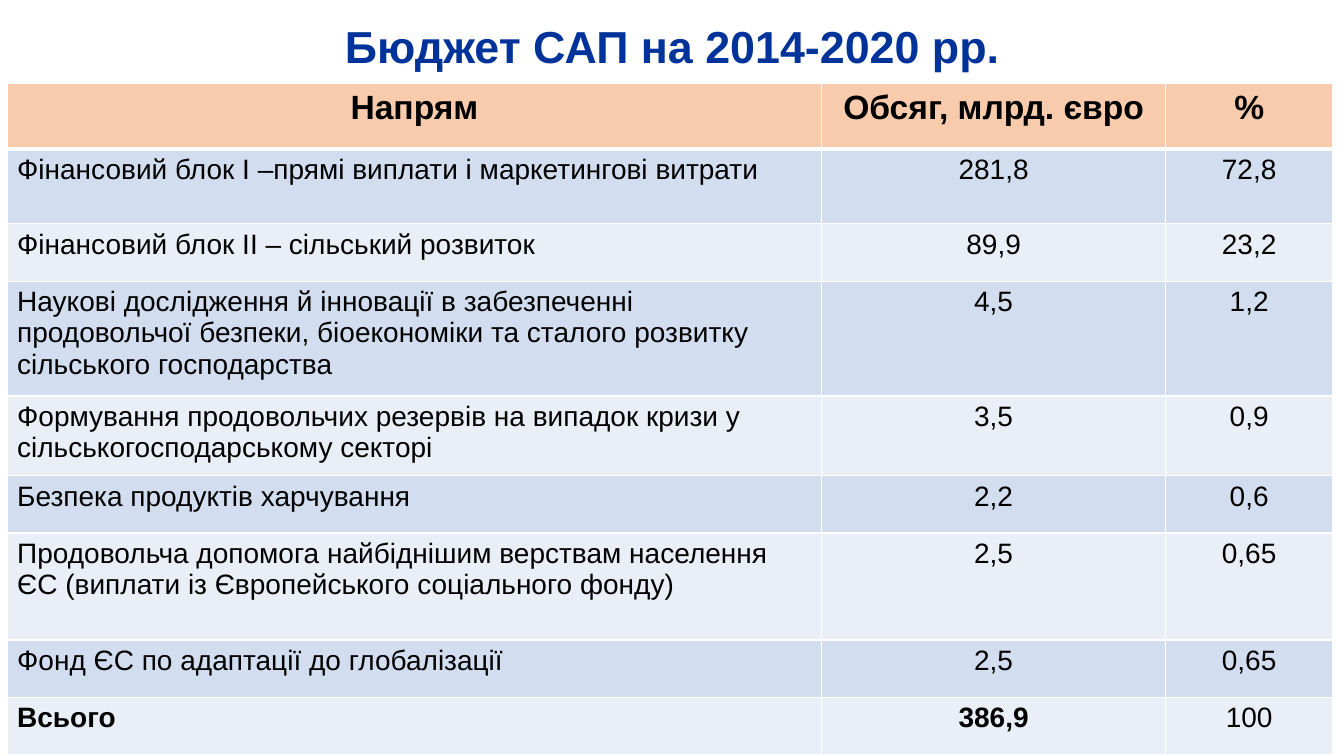
"""Build the slide with the 2014-2020 agricultural policy budget table."""
from dataclasses import dataclass

from lxml import etree
from pptx import Presentation
from pptx.dml.color import RGBColor
from pptx.enum.text import MSO_ANCHOR, PP_ALIGN
from pptx.oxml.ns import qn
from pptx.util import Inches, Pt

LEFT, CENTER = PP_ALIGN.LEFT, PP_ALIGN.CENTER
MIDDLE = MSO_ANCHOR.MIDDLE

TITLE = "Бюджет САП на 2014-2020 рр."
HEADER = ("Напрям", "Обсяг, млрд. євро", "%")
BUDGET = [
    ("Фінансовий блок I –прямі виплати і маркетингові витрати", "281,8", "72,8"),
    ("Фінансовий блок II – сільський розвиток", "89,9", "23,2"),
    ("Наукові дослідження й інновації в забезпеченні продовольчої безпеки, "
     "біоекономіки та сталого розвитку сільського господарства", "4,5", "1,2"),
    ("Формування продовольчих резервів на випадок кризи у "
     "сільськогосподарському секторі", "3,5", "0,9"),
    ("Безпека продуктів харчування", "2,2", "0,6"),
    ("Продовольча допомога найбіднішим верствам населення ЄС "
     "(виплати із Європейського соціального фонду)", "2,5", "0,65"),
    ("Фонд ЄС по адаптації до глобалізації", "2,5", "0,65"),
    ("Всього", "386,9", "100"),
]
COLUMN_WIDTHS = (8.08, 3.41, 1.66)
ROW_HEIGHTS = (0.65, 0.74, 0.57, 1.14, 0.79, 0.57, 1.06, 0.57, 0.57)


@dataclass(frozen=True)
class Theme:
    """Colours, type sizes and line widths of the slide."""
    font: str = "Arial"
    title_color: str = "003399"
    text_color: str = "000000"
    header_fill: str = "F8CBAD"
    band_fills: tuple = ("D2DEEF", "EAEFF7")
    border_color: str = "FFFFFF"
    title_size: int = 32
    header_size: int = 24
    body_size: int = 20
    thin: int = 1
    thick: int = 3


class SlideBuilder:
    """Places styled elements on the current slide."""

    def __init__(self, slide, theme):
        self.slide = slide
        self.theme = theme

    def add_text(self, frame, text, size, color, bold, align, spacing=None):
        """Fill a text frame with one formatted paragraph."""
        para = frame.paragraphs[0]
        para.alignment = align
        para.line_spacing = spacing
        span = para.add_run()
        span.text = text
        span.font.color.rgb = RGBColor.from_string(color)
        formats = {"name": self.theme.font, "size": Pt(size), "bold": bold}
        for name, value in formats.items():
            setattr(span.font, name, value)

    def title(self, text, left, top, width, height):
        """Add the centred slide title."""
        box = self.slide.shapes.add_textbox(
            Inches(left), Inches(top), Inches(width), Inches(height))
        frame = box.text_frame
        frame.word_wrap = True
        frame.vertical_anchor = MIDDLE
        self.add_text(frame, text, self.theme.title_size, self.theme.title_color,
                      True, CENTER, 0.9)

    def borders(self, cell, widths):
        """Draw the four borders of a cell from widths in points."""
        properties = cell._tc.get_or_add_tcPr()
        for side, width in widths.items():
            line = etree.SubElement(properties, qn(f"a:ln{side}"), w=str(Pt(width)))
            fill = etree.SubElement(line, qn("a:solidFill"))
            etree.SubElement(fill, qn("a:srgbClr"), val=self.theme.border_color)

    def cell(self, cell, text, row, column, last_row):
        """Style and fill one table cell according to its position."""
        theme = self.theme
        is_header = row == 0
        bold = is_header or (row == last_row and column < 2)
        self.borders(cell, {
            "L": theme.thin,
            "R": theme.thin,
            "T": theme.thick if row == 1 else theme.thin,
            "B": theme.thick if is_header else theme.thin,
        })
        fill = theme.header_fill if is_header else theme.band_fills[(row - 1) % 2]
        cell.fill.solid()
        cell.fill.fore_color.rgb = RGBColor.from_string(fill)
        self.add_text(cell.text_frame, text,
                      theme.header_size if is_header else theme.body_size,
                      theme.text_color, bold,
                      CENTER if is_header or column else LEFT)

    def table(self, rows, widths, heights, left, top):
        """Add a banded table with a header row and a total row."""
        table = self.slide.shapes.add_table(
            len(rows), len(widths), Inches(left), Inches(top),
            Inches(sum(widths)), Inches(sum(heights))).table
        for column, width in zip(table.columns, widths):
            column.width = Inches(width)
        for row, height in zip(table.rows, heights):
            row.height = Inches(height)
        for row, texts in enumerate(rows):
            for column, text in enumerate(texts):
                self.cell(table.cell(row, column), text, row, column, len(rows) - 1)


def main():
    """Create the deck and save it."""
    deck = Presentation()
    deck.slide_width, deck.slide_height = Inches(13.33), Inches(7.5)
    page = SlideBuilder(deck.slides.add_slide(deck.slide_layouts[6]), Theme())
    page.title(TITLE, 0.92, 0.15, 11.5, 0.68)
    page.table([HEADER, *BUDGET], COLUMN_WIDTHS, ROW_HEIGHTS, 0.07, 0.83)
    deck.save("out.pptx")


if __name__ == "__main__":
    main()
